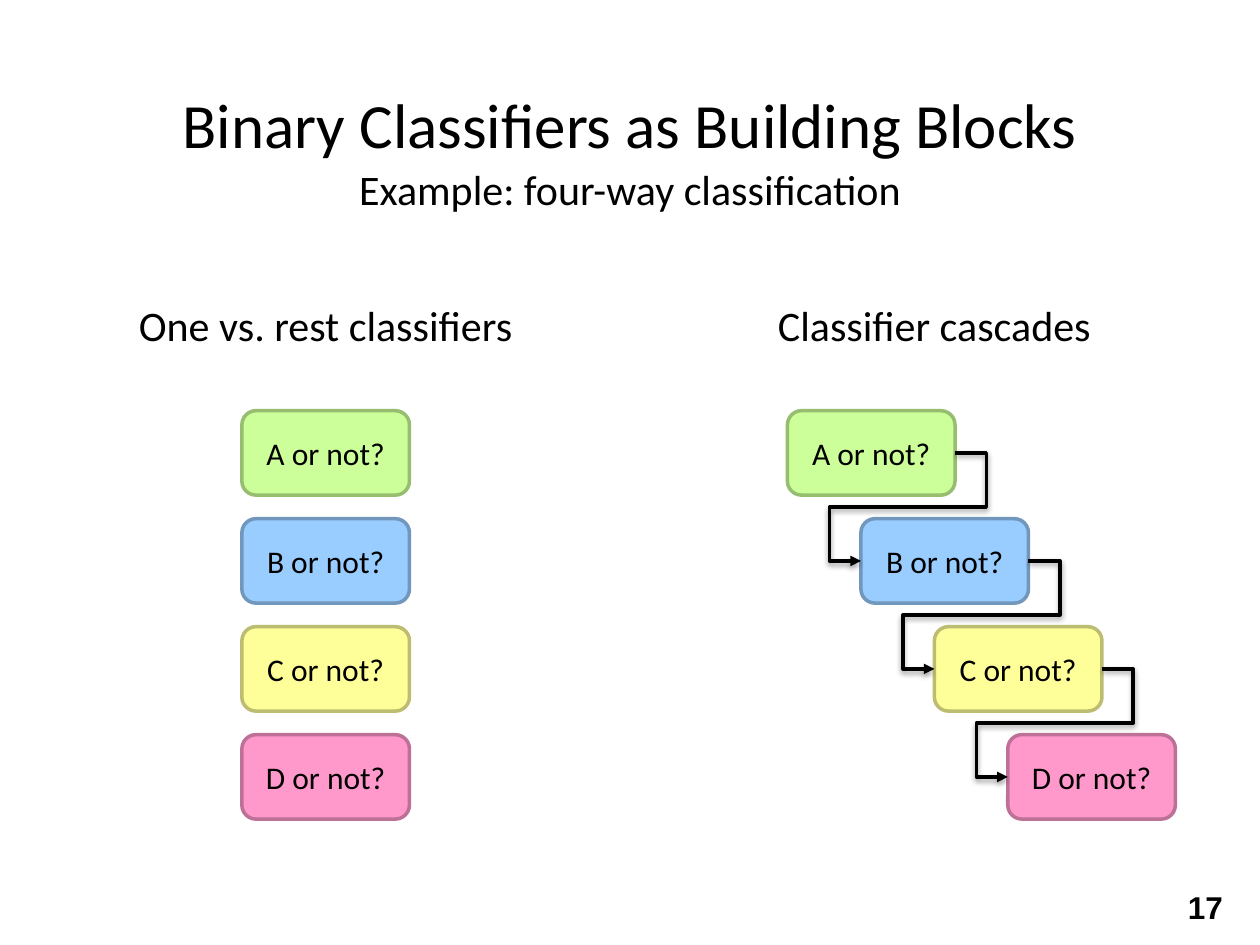
from lxml.etree import SubElement as Sub
from pptx import Presentation
from pptx.dml.color import RGBColor
from pptx.enum.shapes import MSO_CONNECTOR as Link, MSO_SHAPE as Shape
from pptx.enum.text import MSO_ANCHOR as Anchor, PP_ALIGN as Align
from pptx.oxml.ns import qn
from pptx.util import Inches, Pt

BLACK = RGBColor(0x00, 0x00, 0x00)
GREEN = RGBColor(0xCC, 0xFF, 0x99)
MOSS = RGBColor(0x97, 0xBD, 0x71)
BLUE = RGBColor(0x99, 0xCC, 0xFF)
STEEL = RGBColor(0x71, 0x97, 0xBD)
YELLOW = RGBColor(0xFF, 0xFF, 0x99)
OLIVE = RGBColor(0xBD, 0xBD, 0x71)
PINK = RGBColor(0xFF, 0x99, 0xCC)
PLUM = RGBColor(0xBD, 0x71, 0x97)

TESTS = [("A", GREEN, MOSS), ("B", BLUE, STEEL), ("C", YELLOW, OLIVE), ("D", PINK, PLUM)]
WIDE, HIGH = 1.33, 0.67
TOP, STEP = 3.26, 0.857


def write(frame, text, size, align=Align.CENTER, font="Calibri", bold=False):
    para = frame.paragraphs[0]
    para.alignment = align
    run = para.add_run()
    run.text = text
    run.font.name = font
    run.font.size = Pt(size)
    run.font.bold = bold
    run.font.color.rgb = BLACK


def add_title(slide, text):
    title = slide.shapes.title
    title.left, title.top = Inches(0), Inches(0.6)
    title.width, title.height = Inches(10), Inches(0.75)
    title.text_frame.vertical_anchor = Anchor.MIDDLE
    write(title.text_frame, text, 36)


def add_label(slide, text, left, top, width, height, size=24, **style):
    box = slide.shapes.add_textbox(Inches(left), Inches(top), Inches(width), Inches(height))
    box.text_frame.word_wrap = True
    write(box.text_frame, text, size, **style)


def add_test(group, name, fill, edge, left, top):
    box = group.shapes.add_shape(
        Shape.ROUNDED_RECTANGLE, Inches(left), Inches(top), Inches(WIDE), Inches(HIGH))
    box.shadow.inherit = False
    box.fill.solid()
    box.fill.fore_color.rgb = fill
    box.line.color.rgb = edge
    box.line.width = Pt(2)
    box.text_frame.vertical_anchor = Anchor.MIDDLE
    write(box.text_frame, f"{name} or not?", 18)
    return box


def add_stack(slide, left, shift):
    group = slide.shapes.add_group_shape()
    boxes = [add_test(group, *test, left + i * shift, TOP + i * STEP)
             for i, test in enumerate(TESTS)]
    return group, boxes


def add_shade(props):
    shade = Sub(Sub(props, qn("a:effectLst")), qn("a:outerShdw"), blurRad="40000",
                dist="20000", dir="5400000", rotWithShape="0")
    color = Sub(shade, qn("a:srgbClr"), val=str(BLACK))
    Sub(color, qn("a:alpha"), val="38000")


def add_link(group, start, end):
    link = group.shapes.add_connector(
        Link.ELBOW, start.left + start.width, start.top + start.height // 2,
        end.left, end.top + end.height // 2)
    link.begin_connect(start, 3)
    link.end_connect(end, 1)
    link.line.color.rgb = BLACK
    link.line.width = Pt(2)
    Sub(link.line._get_or_add_ln(), qn("a:tailEnd"), type="triangle")
    props = link._element.spPr
    shape = props.find(qn("a:prstGeom"))
    shape.set("prst", "bentConnector5")
    guides = shape.find(qn("a:avLst"))
    for i, value in enumerate((-33333, 50000, 133333), 1):
        Sub(guides, qn("a:gd"), name=f"adj{i}", fmla=f"val {value}")
    add_shade(props)


def main():
    deck = Presentation()
    deck.slide_width, deck.slide_height = Inches(10), Inches(7.5)
    slide = deck.slides.add_slide(deck.slide_layouts[5])
    add_title(slide, "Binary Classifiers as Building Blocks")
    add_label(slide, "Example: four-way classification", 0, 1.25, 10, 0.5)
    add_label(slide, "One vs. rest classifiers", 0, 2.33, 5.17, 0.5)
    add_stack(slide, 1.92, 0)
    group, boxes = add_stack(slide, 6.25, 0.583)
    for start, end in zip(boxes, boxes[1:]):
        add_link(group, start, end)
    add_label(slide, "Classifier cascades", 4.83, 2.33, 5.17, 0.5)
    add_label(slide, "17", 9.33, 7, 0.58, 0.4, 18,
              align=Align.LEFT, font="Arial", bold=True)
    deck.save("out.pptx")


if __name__ == "__main__":
    main()
